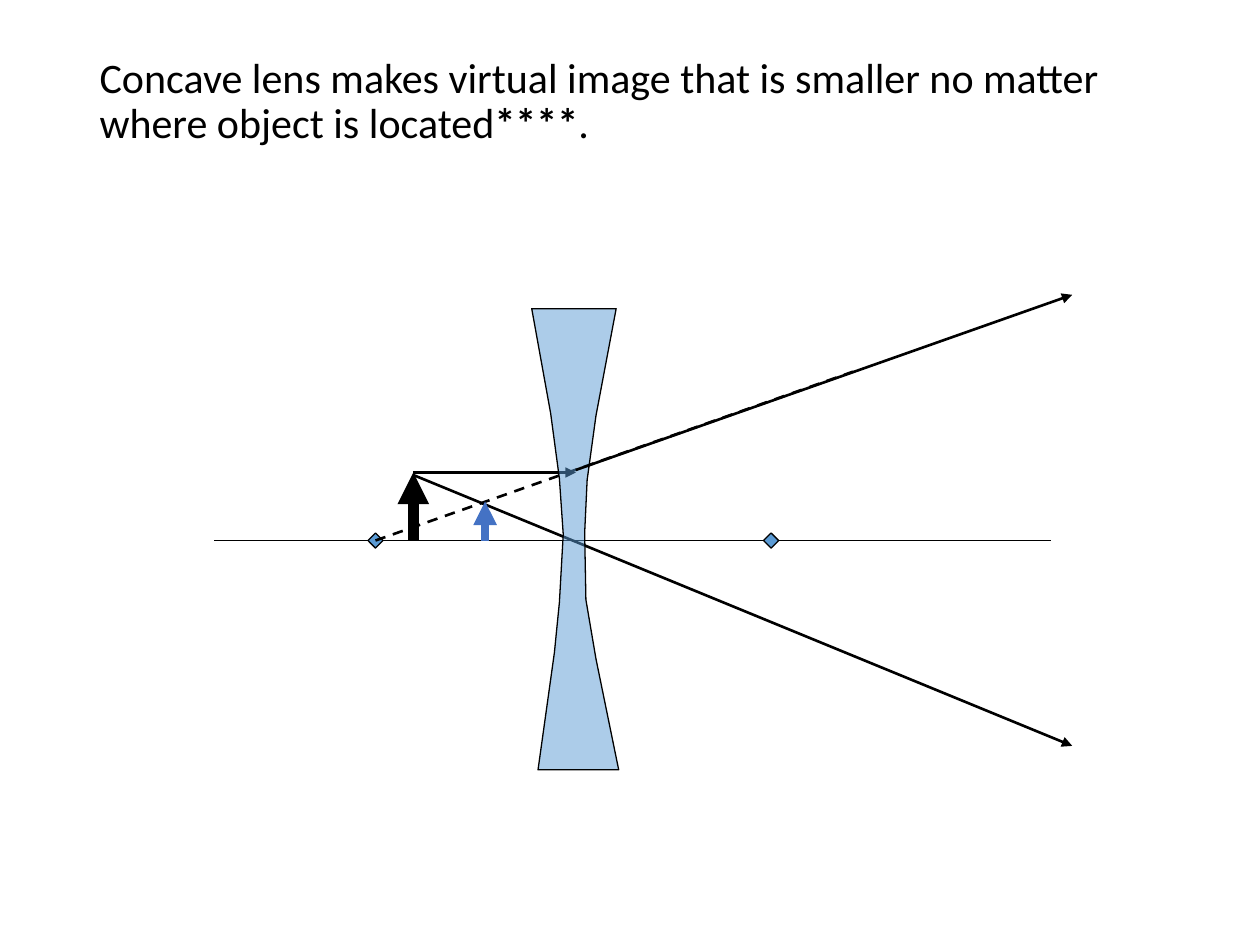
"""Builds a slide with the ray diagram of a concave lens."""
import pptx
import pptx.dml.color
import pptx.enum.dml
import pptx.enum.shapes
import pptx.enum.text
import pptx.oxml
import pptx.oxml.ns
import pptx.util
from pptx.util import Inches

BLACK = pptx.dml.color.RGBColor(0x00, 0x00, 0x00)
LIGHT_BLUE = pptx.dml.color.RGBColor(0x5B, 0x9B, 0xD5)
BLUE = pptx.dml.color.RGBColor(0x44, 0x72, 0xC4)

AXIS_Y = 4.29
LENS_X = 4.57
OBJECT_X, OBJECT_TOP = 3.28, 3.75
IMAGE_X, IMAGE_TOP = 3.85, 3.98
LEFT_FOCUS, RIGHT_FOCUS = 2.98, 6.12
FOCUS_SIZE = 0.12
RAY_END = 8.51
RAY_WIDTH = 1.5
LENS_OUTLINE = [
    (4.27, 6.11), (4.91, 6.11), (4.73, 5.23), (4.65, 4.76), (4.64, 4.23),
    (4.66, 3.81), (4.73, 3.3), (4.89, 2.45), (4.22, 2.45), (4.37, 3.28),
    (4.44, 3.8), (4.47, 4.24), (4.44, 4.78), (4.4, 5.18),
]


class Diagram:
    """Holds the style and the current slide."""

    font = "Calibri"
    title_size = 24
    thin = 0.75

    def __init__(self, deck):
        self.page = deck.slides.add_slide(deck.slide_layouts[5])

    def title(self, left, top, width, height, runs):
        box = self.page.shapes.title
        box.left, box.top = Inches(left), Inches(top)
        box.width, box.height = Inches(width), Inches(height)
        frame = box.text_frame
        frame.word_wrap = True
        frame.auto_size = pptx.enum.text.MSO_AUTO_SIZE.NONE
        frame.vertical_anchor = pptx.enum.text.MSO_ANCHOR.TOP
        para = frame.paragraphs[0]
        para.alignment = pptx.enum.text.PP_ALIGN.LEFT
        para.line_spacing = 0.9
        for text, bold in runs:
            span = para.add_run()
            span.text = text
            span.font.name = self.font
            span.font.size = pptx.util.Pt(self.title_size)
            span.font.bold = bold
            span.font.color.rgb = BLACK

    def line(self, start, end, width, color=BLACK, arrow=False, dashed=False):
        connector = self.page.shapes.add_connector(
            pptx.enum.shapes.MSO_CONNECTOR.STRAIGHT,
            *(Inches(value) for value in (*start, *end)))
        connector.line.width = pptx.util.Pt(width)
        connector.line.color.rgb = color
        if dashed:
            connector.line.dash_style = pptx.enum.dml.MSO_LINE.DASH
        if arrow:
            head = pptx.oxml.parse_xml(
                f'<a:tailEnd {pptx.oxml.ns.nsdecls("a")} type="triangle"/>')
            connector.line._get_or_add_ln().append(head)
        connector._element.spPr.append(pptx.oxml.parse_xml(
            f'<a:effectLst {pptx.oxml.ns.nsdecls("a")}/>'))

    def paint(self, shape):
        shape.shadow.inherit = False
        shape.fill.solid()
        shape.fill.fore_color.rgb = LIGHT_BLUE
        shape.line.color.rgb = BLACK
        shape.line.width = pptx.util.Pt(self.thin)

    def focus(self, x, y, size):
        shape = self.page.shapes.add_shape(
            pptx.enum.shapes.MSO_SHAPE.DIAMOND, Inches(x - size / 2),
            Inches(y - size / 2), Inches(size), Inches(size))
        self.paint(shape)

    def lens(self, outline, opacity):
        points = [(Inches(x), Inches(y)) for x, y in outline]
        builder = self.page.shapes.build_freeform(*points[0])
        builder.add_line_segments(points[1:], close=True)
        shape = builder.convert_to_shape()
        self.paint(shape)
        color = shape._element.spPr.find(
            "/".join(map(pptx.oxml.ns.qn, ("a:solidFill", "a:srgbClr"))))
        color.append(pptx.oxml.parse_xml(
            f'<a:alpha {pptx.oxml.ns.nsdecls("a")} val="{opacity * 1000}"/>'))


def main():
    deck = pptx.Presentation()
    deck.slide_width, deck.slide_height = Inches(10), Inches(7.5)
    diagram = Diagram(deck)
    diagram.title(0.69, 0.4, 8.62, 1.45, [
        ("Concave lens makes virtual image that is smaller no matter "
         "where object is located", False),
        ("****", True),
        (".", False),
    ])
    diagram.line((1.7, AXIS_Y), (8.34, AXIS_Y), diagram.thin)
    diagram.line((OBJECT_X, 3.77), (RAY_END, 5.92), RAY_WIDTH, arrow=True)
    for x in (RIGHT_FOCUS, LEFT_FOCUS):
        diagram.focus(x, AXIS_Y, FOCUS_SIZE)
    diagram.line((OBJECT_X, AXIS_Y), (OBJECT_X, OBJECT_TOP), 6, arrow=True)
    diagram.line((OBJECT_X, OBJECT_TOP), (LENS_X, OBJECT_TOP), RAY_WIDTH, arrow=True)
    diagram.line((LEFT_FOCUS, AXIS_Y), (6.77, 2.95), RAY_WIDTH, dashed=True)
    diagram.line((IMAGE_X, AXIS_Y), (IMAGE_X, IMAGE_TOP), 4.5, BLUE, arrow=True)
    diagram.lens(LENS_OUTLINE, 50)
    diagram.line((LENS_X, 3.73), (RAY_END, 2.34), RAY_WIDTH, arrow=True)
    deck.save("out.pptx")


if __name__ == "__main__":
    main()
